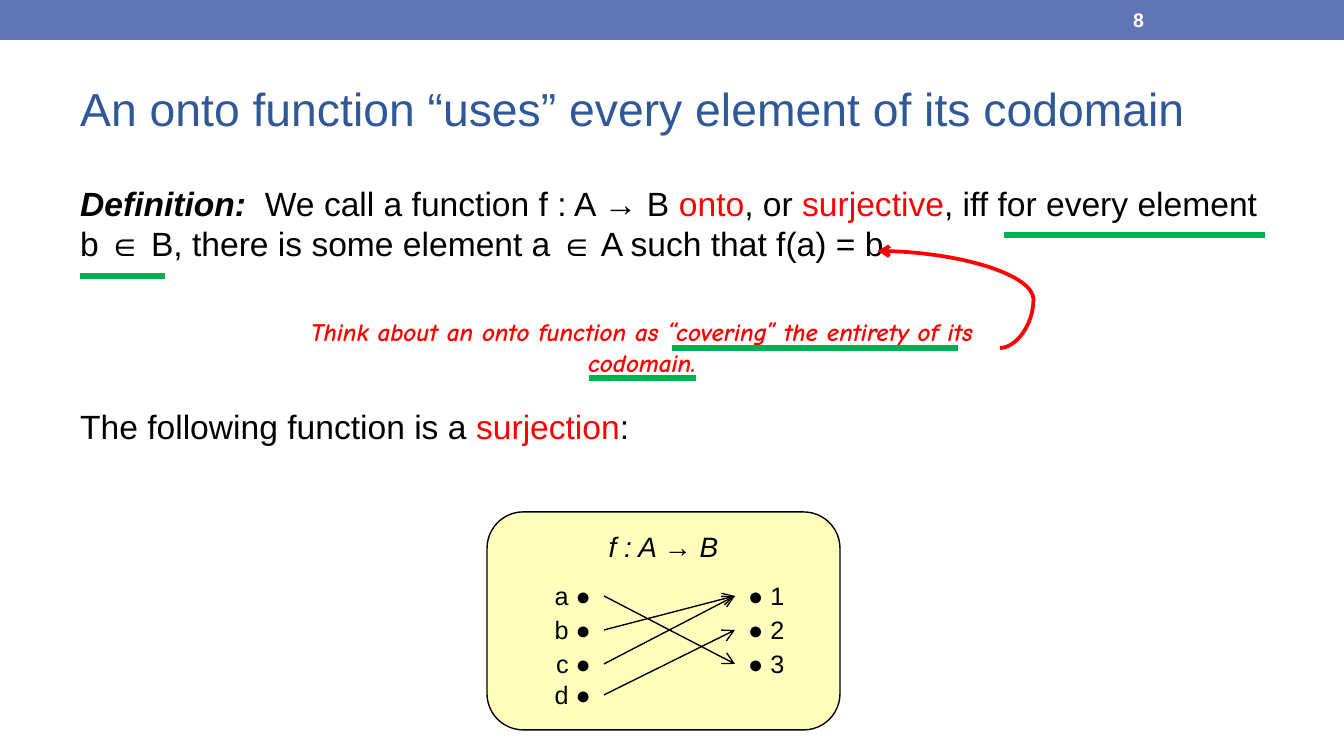
from dataclasses import dataclass

from lxml.etree import SubElement
from pptx import Presentation
from pptx.dml.color import RGBColor
from pptx.enum.shapes import MSO_CONNECTOR, MSO_SHAPE
from pptx.enum.text import MSO_ANCHOR, PP_ALIGN
from pptx.oxml.ns import qn
from pptx.util import Pt

EMU_PER_PX = 914400 / 134.4


@dataclass(frozen=True)
class Theme:
    font: str = "Arial"
    note_font: str = "Comic Neue"
    bar: str = "6076B4"
    title: str = "2F5897"
    text: str = "000000"
    light: str = "FFFFFF"
    accent: str = "FF0000"
    mark: str = "00B050"
    card: str = "FFFFBD"
    title_size: float = 24.8
    body_size: float = 18
    card_size: float = 15
    small_size: float = 13.5
    number_size: float = 10.5


T = Theme()


def px(n):
    return round(n * EMU_PER_PX)


def rgb(color):
    return RGBColor.from_string(color)


def add_run(p, text, size, color=T.text, font=T.font, bold=False, italic=False):
    r = p.add_run()
    r.text = text
    r.font.name, r.font.size = font, Pt(size)
    r.font.bold, r.font.italic = bold, italic
    r.font.color.rgb = rgb(color)


def add_text(slide, box, anchor=MSO_ANCHOR.TOP, align=PP_ALIGN.LEFT):
    """Add an empty wrapping text box; return it with its first paragraph."""
    sp = slide.shapes.add_textbox(*map(px, box))
    tf = sp.text_frame
    tf.word_wrap = True
    tf.vertical_anchor = anchor
    p = tf.paragraphs[0]
    p.alignment = align
    return sp, p


def add_panel(slide, kind, box, fill, line=None):
    sp = slide.shapes.add_shape(kind, *map(px, box))
    sp.shadow.inherit = False
    sp.fill.solid()
    sp.fill.fore_color.rgb = rgb(fill)
    if line:
        sp.line.color.rgb = rgb(line)
        sp.line.width = Pt(0.75)
    else:
        sp.line.fill.background()
    return sp


def add_line(slide, start, end, color, width, arrow=False, kind=MSO_CONNECTOR.STRAIGHT):
    cxn = slide.shapes.add_connector(kind, *map(px, (*start, *end)))
    cxn.line.color.rgb = rgb(color)
    cxn.line.width = Pt(width)
    if arrow:
        SubElement(cxn.line._get_or_add_ln(), qn("a:tailEnd"), type="arrow")
    SubElement(cxn._element.spPr, qn("a:effectLst"))
    return cxn


def add_header(slide):
    add_panel(slide, MSO_SHAPE.RECTANGLE, (0, 0, 1344, 40), T.bar)
    _, p = add_text(slide, (1120, 2, 157, 36), MSO_ANCHOR.MIDDLE)
    add_run(p, "8", T.number_size, T.light, bold=True)
    _, p = add_text(slide, (67, 59, 1210, 109), MSO_ANCHOR.MIDDLE)
    p.line_spacing = 0.8
    add_run(p, "An onto function “uses” every element of its codomain", T.title_size, T.title)


def add_body(slide):
    sp, p = add_text(slide, (67, 176, 1210, 538))
    p.space_before = Pt(3.6)
    add_run(p, "Definition:", T.body_size, bold=True, italic=True)
    for text, color in (
        ("  We call a function f : A → B ", T.text),
        ("onto", T.accent),
        (", or ", T.text),
        ("surjective", T.accent),
        (", iff for every element b ∈ B, there is some element a ∈ A such that f(a) = b.", T.text),
    ):
        add_run(p, text, T.body_size, color)

    # The gap leaves room for the remark
    p = sp.text_frame.add_paragraph()
    p.space_before = Pt(76.5)
    for text, color in (
        ("The following function is a ", T.text),
        ("surjection", T.accent),
        (":", T.text),
    ):
        add_run(p, text, T.body_size, color)


def add_remark(slide):
    _, p = add_text(slide, (285, 310, 714, 75), align=PP_ALIGN.CENTER)
    add_run(p, "Think about an onto function as “covering” the entirety of its codomain.",
            T.small_size, T.accent, T.note_font, bold=True, italic=True)
    curve = add_line(slide, (1000, 348), (878, 251), T.accent, 2, True, MSO_CONNECTOR.CURVE)
    guides = curve._element.spPr.find(qn("a:prstGeom")).get_or_add_avLst()
    SubElement(guides, qn("a:gd"), name="adj1", fmla="val -27500")


def add_mapping(slide):
    card = add_panel(slide, MSO_SHAPE.ROUNDED_RECTANGLE, (487, 512, 353, 218), T.card, T.text)
    card.text_frame.vertical_anchor = MSO_ANCHOR.TOP
    p = card.text_frame.paragraphs[0]
    p.alignment = PP_ALIGN.CENTER
    add_run(p, "f : A → B", T.card_size, italic=True)

    # Elements of the domain and the codomain
    tops = (574, 608, 642, 673)
    nodes = {}
    for names, label, left, align in (
        ("abcd", "{} ●", 530, PP_ALIGN.RIGHT),
        ("123", "● {}", 735, PP_ALIGN.LEFT),
    ):
        for name, top in zip(names, tops):
            nodes[name], p = add_text(slide, (left, top, 74, 44), align=align)
            add_run(p, label.format(name), T.small_size)

    # Arrows of the function
    for source, target in ("a3", "b1", "c1", "d2"):
        cxn = add_line(slide, (0, 0), (0, 0), T.text, 0.75, arrow=True)
        cxn.begin_connect(nodes[source], 3)
        cxn.end_connect(nodes[target], 1)


def add_underlines(slide):
    for left, right, y in ((672, 958, 348), (589, 696, 378), (1004, 1265, 235), (80, 165, 276)):
        add_line(slide, (left, y), (right, y), T.mark, 3)


def main():
    prs = Presentation()
    prs.slide_width, prs.slide_height = px(1344), px(756)
    slide = prs.slides.add_slide(prs.slide_layouts[6])
    add_header(slide)
    add_body(slide)
    add_remark(slide)
    add_mapping(slide)
    add_underlines(slide)
    prs.save("out.pptx")


if __name__ == "__main__":
    main()
